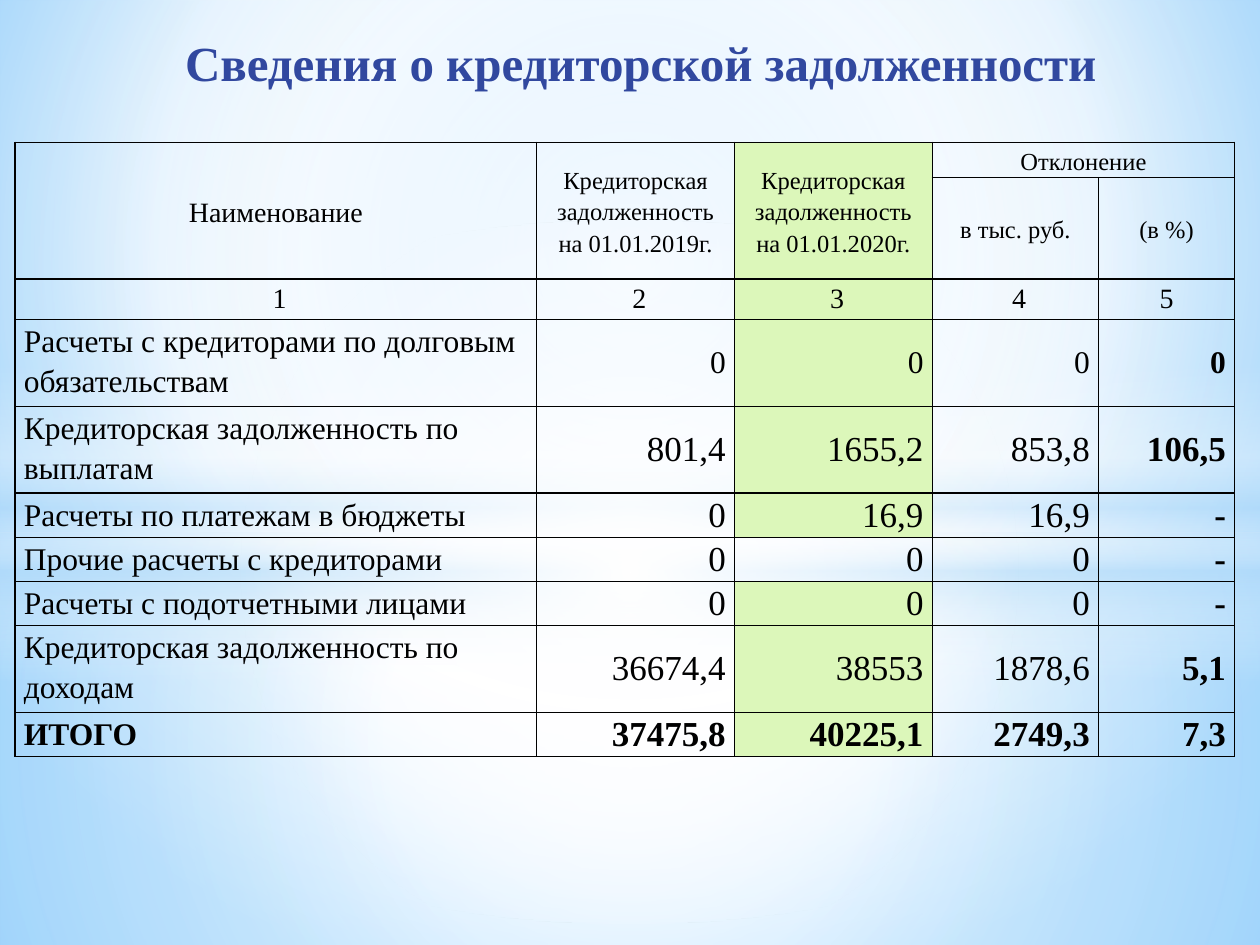
from lxml.etree import SubElement
from pptx import Presentation
from pptx.dml.color import RGBColor
from pptx.enum.shapes import MSO_SHAPE as Shape
from pptx.enum.text import MSO_ANCHOR as Anchor, PP_ALIGN as Align
from pptx.oxml.ns import qn
from pptx.util import Inches, Pt

FONT = "Times New Roman"
BLACK = RGBColor(0x00, 0x00, 0x00)
WHITE = RGBColor(0xFF, 0xFF, 0xFF)
NAVY = RGBColor(0x31, 0x48, 0x9F)
GREEN = RGBColor(0xDC, 0xF7, 0xBA)
SKY = RGBColor(0x9E, 0xD5, 0xFF)
AZURE = RGBColor(0x5B, 0xB9, 0xFF)
PALE = RGBColor(0xB4, 0xDC, 0xFA)

CENTER = (50, 50, 50, 50)
COLS = (4.14, 1.57, 1.57, 1.32, 1.08)
ROWS = (0.28, 0.5, 0.32, 0.69, 0.69, 0.35, 0.35, 0.35, 0.69, 0.35)
HEADER = [
    ("Наименование", "Кредиторская задолженность на 01.01.2019г.",
     "Кредиторская задолженность на 01.01.2020г.", "Отклонение", ""),
    ("", "", "", "в тыс. руб.", "(в %)"),
    ("1", "2", "3", "4", "5"),
]
DATA = [
    ("Расчеты с кредиторами по долговым обязательствам", "0", "0", "0", "0"),
    ("Кредиторская задолженность по выплатам", "801,4", "1655,2", "853,8", "106,5"),
    ("Расчеты по платежам в бюджеты", "0", "16,9", "16,9", "-"),
    ("Прочие расчеты с кредиторами", "0", "0", "0", "-"),
    ("Расчеты с подотчетными лицами", "0", "0", "0", "-"),
    ("Кредиторская задолженность по доходам", "36674,4", "38553", "1878,6", "5,1"),
    ("ИТОГО", "37475,8", "40225,1", "2749,3", "7,3"),
]
MERGES = [((0, 0), (1, 0)), ((0, 1), (1, 1)), ((0, 2), (1, 2)), ((0, 3), (0, 4))]
FIRST_DATA, UNFILLED, TOTAL = 3, 6, 9


class SlideBuilder:
    def __init__(self, prs):
        self.prs = prs
        self.s = prs.slides.add_slide(prs.slide_layouts[6])

    def box(self, x, y, w, h):
        W, H = self.prs.slide_width, self.prs.slide_height
        return int(x * W), int(y * H), int(w * W), int(h * H)

    def gradient(self, fill, element, stops, focus=None):
        fill.gradient()
        grad = next(element.iter(qn("a:gradFill")))
        grad.clear()
        grad.set("rotWithShape", "1")
        gs_list = SubElement(grad, qn("a:gsLst"))
        for pos, color, opacity in stops:
            gs = SubElement(gs_list, qn("a:gs"), pos=str(pos * 1000))
            clr = SubElement(gs, qn("a:srgbClr"), val=str(color))
            if opacity < 100:
                SubElement(clr, qn("a:alpha"), val=str(opacity * 1000))
        if focus:
            circle = SubElement(grad, qn("a:path"), {"path": "circle"})
            sides = {k: str(v * 1000) for k, v in zip("ltrb", focus)}
            SubElement(circle, qn("a:fillToRect"), sides)
        else:
            SubElement(grad, qn("a:lin"), ang="5400000", scaled="0")

    def background(self, stops, focus):
        self.gradient(self.s.background.fill, self.s.element, stops, focus)

    def glow(self, kind, area, stops, focus=None):
        sp = self.s.shapes.add_shape(kind, *self.box(*area))
        sp.shadow.inherit = False
        sp.line.fill.background()
        self.gradient(sp.fill, sp.element, stops, focus)

    def style(self, p, size, color=BLACK, bold=False, align=Align.LEFT):
        p.alignment = align
        f = p.font
        f.name, f.size, f.bold = FONT, Pt(size), bold
        f.color.rgb = color

    def title(self, text, area):
        tf = self.s.shapes.add_textbox(*self.box(*area)).text_frame
        tf.word_wrap = True
        tf.vertical_anchor = Anchor.BOTTOM
        tf.margin_top = tf.margin_bottom = Inches(0.03)
        p = tf.paragraphs[0]
        p.text = text
        self.style(p, 28, NAVY, True, Align.CENTER)
        p._p.get_or_add_pPr().set("marL", str(Inches(0.2)))

    def cell(self, cell, text, size, bold, align, anchor, spacing, fill):
        cell.text = text
        cell.margin_left = cell.margin_right = Inches(0.07)
        cell.margin_top = cell.margin_bottom = 0
        cell.vertical_anchor = anchor
        p = cell.text_frame.paragraphs[0]
        self.style(p, size, bold=bold, align=align)
        p.line_spacing = spacing
        tcPr = cell._tc.get_or_add_tcPr()
        for side in "LRTB":
            ln = SubElement(tcPr, qn(f"a:ln{side}"), w=str(Pt(1)))
            solid = SubElement(ln, qn("a:solidFill"))
            SubElement(solid, qn("a:srgbClr"), val=str(BLACK))
        if fill:
            cell.fill.solid()
            cell.fill.fore_color.rgb = fill
        else:
            cell.fill.background()
        return p

    def table(self, x, y):
        rows = HEADER + DATA
        area = Inches(x), Inches(y), Inches(sum(COLS)), Inches(sum(ROWS))
        t = self.s.shapes.add_table(len(ROWS), len(COLS), *area).table
        t.first_row = t.horz_banding = False
        for col, w in zip(t.columns, COLS):
            col.width = Inches(w)
        for row, h in zip(t.rows, ROWS):
            row.height = Inches(h)
        for r, row in enumerate(rows):
            for c, text in enumerate(row):
                fill = GREEN if c == 2 and r != UNFILLED else None
                bold = r == TOTAL or (r >= FIRST_DATA and c == 4)
                if r < FIRST_DATA:
                    size = 16 if c == 0 or r == 2 else 14
                    look = Align.CENTER, Anchor.TOP if r == 2 else Anchor.MIDDLE, 1.15
                elif c == 0:
                    size, look = 18, (Align.LEFT, Anchor.TOP, 1.15)
                else:
                    size = 18 if r == FIRST_DATA else 20
                    look = Align.RIGHT, Anchor.MIDDLE, 1.0
                p = self.cell(t.cell(r, c), text, size, bold, *look, fill)
                if r == 2 and c < 4:
                    p._p.get_or_add_pPr().set("indent", str(Inches(0.06)))
        for start, end in MERGES:
            t.cell(*start).merge(t.cell(*end))


def main():
    prs = Presentation()
    prs.slide_width, prs.slide_height = Inches(10), Inches(7.5)
    b = SlideBuilder(prs)
    b.background([(0, SKY, 100), (60, WHITE, 100), (100, AZURE, 100)], (20, 10, 20, 60))
    b.glow(Shape.RECTANGLE, (0, 0.564, 1, 0.436),
           [(0, WHITE, 91), (37, WHITE, 76), (100, PALE, 79)], CENTER)
    b.glow(Shape.RECTANGLE, (0, 0, 1, 0.564),
           [(0, WHITE, 89), (48, WHITE, 62), (100, PALE, 79)], CENTER)
    b.glow(Shape.RECTANGLE, (0, 0.387, 1, 0.333),
           [(0, WHITE, 0), (29, WHITE, 30), (45, PALE, 40),
            (55, WHITE, 26), (65, PALE, 60), (100, WHITE, 0)])
    b.glow(Shape.OVAL, (0, 0.233, 1, 0.744), [(0, WHITE, 100), (54, WHITE, 0)], CENTER)
    b.title("Сведения о кредиторской задолженности", (0.016, 0.028, 0.965, 0.073))
    b.table(0.12, 1.13)
    prs.save("out.pptx")


if __name__ == "__main__":
    main()
